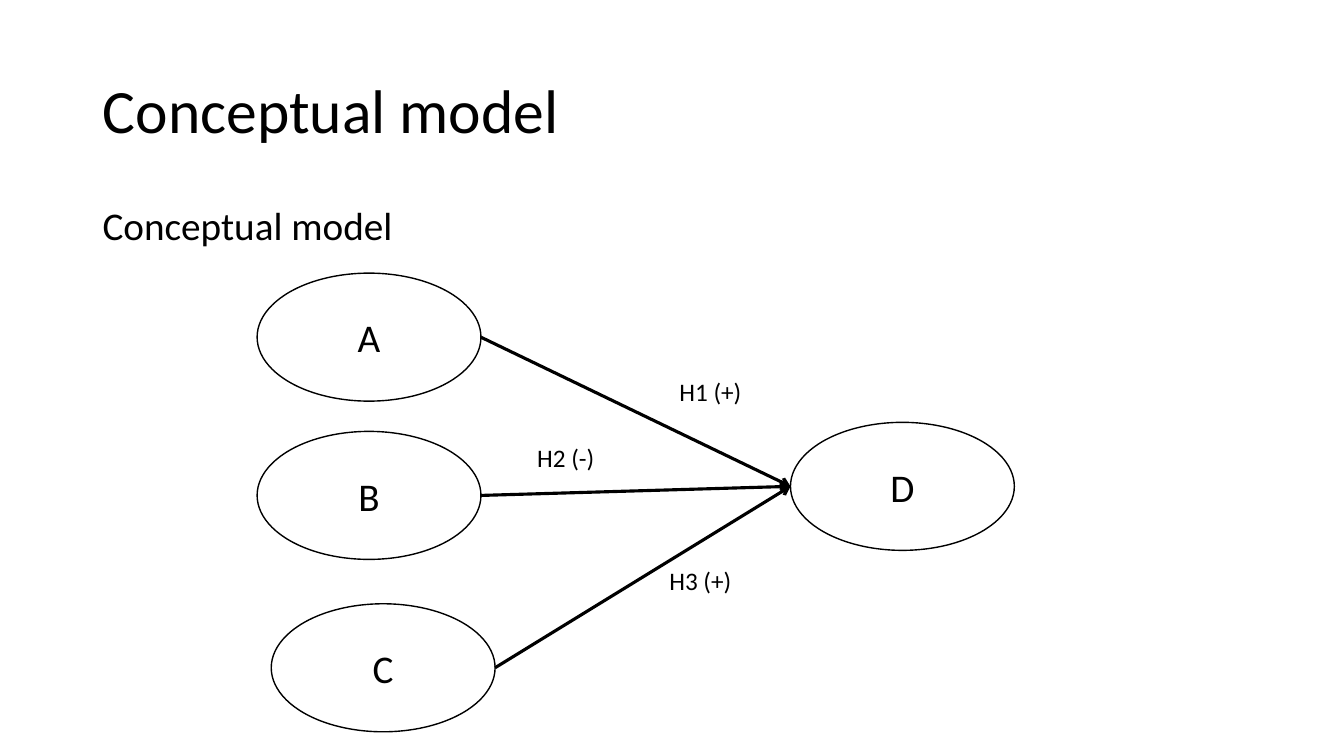
from lxml.etree import SubElement
from pptx import Presentation
from pptx.dml.color import RGBColor
from pptx.enum.shapes import MSO_CONNECTOR, MSO_SHAPE
from pptx.enum.text import MSO_ANCHOR, PP_ALIGN
from pptx.oxml.ns import qn
from pptx.util import Inches, Pt

COLORS = {"ink": "000000", "paper": "FFFFFF"}
FONT = "Calibri"
NODE_W, NODE_H = 2.22, 1.27
CAUSES = [("A", 2.55, 2.71), ("B", 2.55, 4.28), ("C", 2.69, 5.99)]
OUTCOME = ("D", 7.84, 4.19)
HYPOTHESES = [
    ("H1 (+)", 6.64, 3.68, 0.98),
    ("H2 (-)", 5.23, 4.34, 0.86),
    ("H3 (+)", 6.54, 5.56, 0.89),
]


def rgb(name):
    return RGBColor.from_string(COLORS[name])


def write(shape, text, size, align=PP_ALIGN.LEFT, anchor=MSO_ANCHOR.TOP):
    tf = shape.text_frame
    tf.text = text
    tf.word_wrap = True
    tf.vertical_anchor = anchor
    p = tf.paragraphs[0]
    p.alignment = align
    p.font.name = FONT
    p.font.size = Pt(size)
    p.font.color.rgb = rgb("ink")
    return p


def add_title(s, text, x, y, w, h):
    title = s.shapes.title
    title.left, title.top = Inches(x), Inches(y)
    title.width, title.height = Inches(w), Inches(h)
    write(title, text, 44, anchor=MSO_ANCHOR.MIDDLE).line_spacing = 0.9


def add_text(s, text, size, x, y, w, h):
    box = s.shapes.add_textbox(Inches(x), Inches(y), Inches(w), Inches(h))
    return write(box, text, size)


def add_node(s, text, x, y):
    node = s.shapes.add_shape(
        MSO_SHAPE.OVAL, Inches(x), Inches(y), Inches(NODE_W), Inches(NODE_H))
    node.shadow.inherit = False
    node.fill.solid()
    node.fill.fore_color.rgb = rgb("paper")
    node.line.color.rgb = rgb("ink")
    node.line.width = Pt(1)
    write(node, text, 28, PP_ALIGN.CENTER, MSO_ANCHOR.MIDDLE)
    return node


def add_arrow(s, cause, outcome):
    """Draw an arrow from the right of one node to the left of another."""
    arrow = s.shapes.add_connector(
        MSO_CONNECTOR.STRAIGHT,
        cause.left + cause.width, cause.top + cause.height // 2,
        outcome.left, outcome.top + outcome.height // 2)
    arrow.line.color.rgb = rgb("ink")
    arrow.line.width = Pt(2.25)
    SubElement(arrow.line._get_or_add_ln(), qn("a:tailEnd"), type="arrow")
    SubElement(arrow._element.spPr, qn("a:effectLst"))


def add_model(s):
    causes = [add_node(s, *cause) for cause in CAUSES]
    outcome = add_node(s, *OUTCOME)
    for cause in causes:
        add_arrow(s, cause, outcome)
    for text, x, y, w in HYPOTHESES:
        add_text(s, text, 18, x, y, w, 0.4)


def main():
    prs = Presentation()
    prs.slide_width, prs.slide_height = Inches(13.33), Inches(7.5)
    s = prs.slides.add_slide(prs.slide_layouts[5])
    add_title(s, "Conceptual model", 0.92, 0.4, 11.5, 1.45)
    p = add_text(s, "Conceptual model", 28, 0.92, 2, 11.5, 0.98)
    p.line_spacing = 0.9
    p.space_before = Pt(10)
    add_model(s)
    prs.save("out.pptx")


if __name__ == "__main__":
    main()
